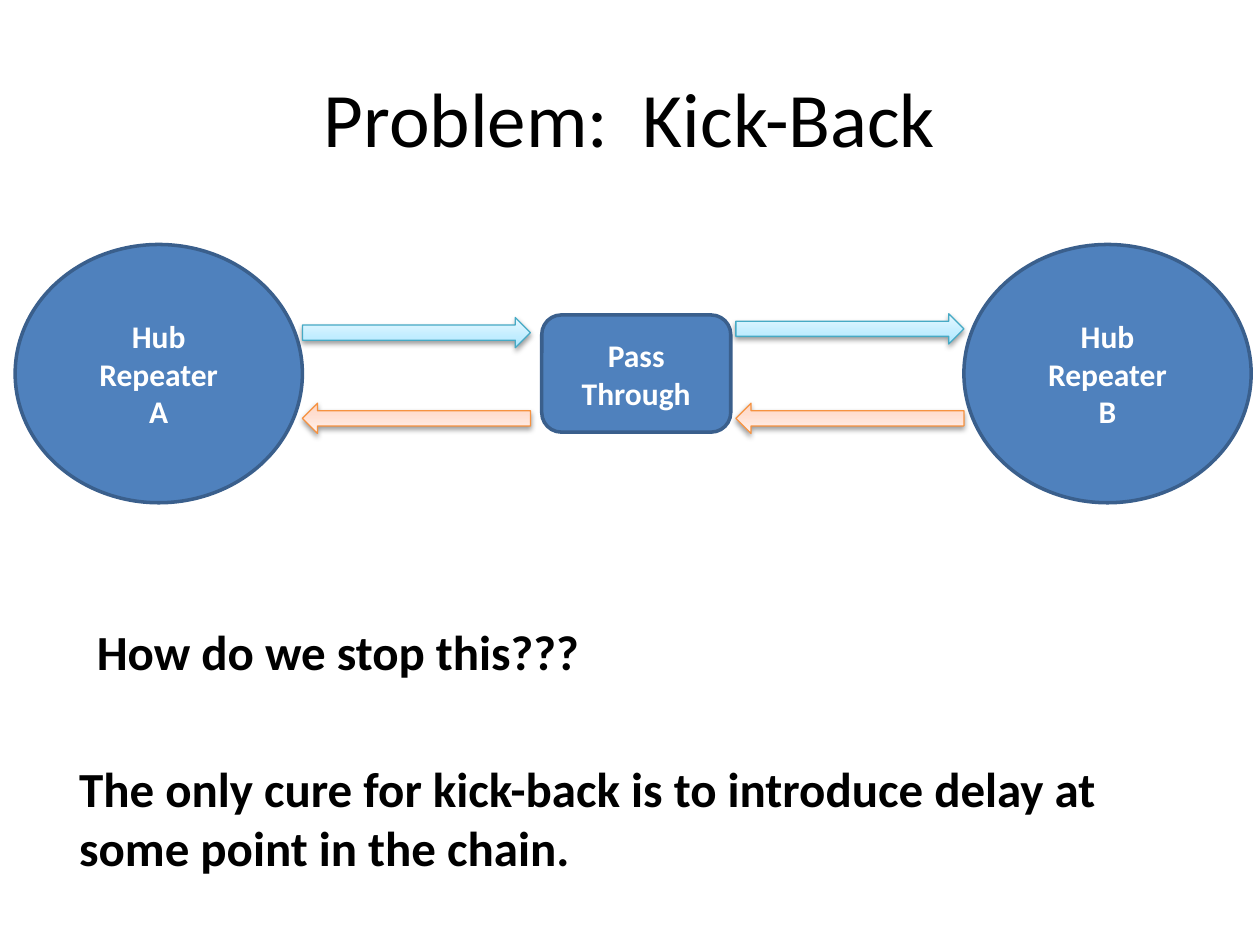
from copy import deepcopy
from dataclasses import dataclass

from lxml.etree import SubElement
from pptx import Presentation
from pptx.dml.color import RGBColor
from pptx.enum.shapes import MSO_SHAPE
from pptx.enum.text import MSO_ANCHOR, PP_ALIGN
from pptx.oxml.ns import qn
from pptx.util import Inches, Pt


@dataclass(frozen=True)
class Theme:
    font: str = "Calibri"
    ink: str = "000000"
    white: str = "FFFFFF"
    node: str = "4F81BD"
    edge: str = "3A5F8C"
    send: tuple = ("46AAC5", "A7E6FF", "C1EDFF", "E7F8FF")
    back: tuple = ("F69240", "FFD2BD", "FFDED0", "FFF2ED")
    head: int = 44
    note: int = 28
    label: int = 18


THEME = Theme()


def write(frame, text, size=THEME.note, color=THEME.ink, bold=True,
          align=PP_ALIGN.LEFT, anchor=MSO_ANCHOR.TOP):
    frame.word_wrap = True
    frame.vertical_anchor = anchor
    para = frame.paragraphs[0]
    para.text = text
    para.alignment = align
    for run in para.runs:
        font = run.font
        font.name, font.size, font.bold = THEME.font, Pt(size), bold
        font.color.rgb = RGBColor.from_string(color)


def place(slide, kind, box, line, width):
    shape = slide.shapes.add_shape(kind, *map(Inches, box))
    shape.shadow.inherit = False
    shape.line.color.rgb = RGBColor.from_string(line)
    shape.line.width = Pt(width)
    return shape


def add_node(slide, kind, box, text):
    node = place(slide, kind, box, THEME.edge, 2)
    node.fill.solid()
    node.fill.fore_color.rgb = RGBColor.from_string(THEME.node)
    write(node.text_frame, text, size=THEME.label, color=THEME.white,
          align=PP_ALIGN.CENTER, anchor=MSO_ANCHOR.MIDDLE)


def add_arrow(slide, box, tones, turn=0):
    line, *shades = tones
    arrow = place(slide, MSO_SHAPE.RIGHT_ARROW, box, line, 0.75)
    arrow.rotation = turn
    fill = arrow.fill
    fill.gradient()
    fill.gradient_angle = 90
    props = arrow._element.spPr
    stops = props.find(".//" + qn("a:gsLst"))
    stops.insert(1, deepcopy(stops[0]))
    for stop, spot, shade in zip(fill.gradient_stops, (0, 0.35, 1), shades):
        stop.position = spot
        stop.color.rgb = RGBColor.from_string(shade)
    cast = SubElement(props.find(qn("a:effectLst")), qn("a:outerShdw"),
                      blurRad=str(Pt(3.1)), dist=str(Pt(1.6)),
                      dir="5400000", rotWithShape="0")
    tint = SubElement(cast, qn("a:srgbClr"), val="000000")
    SubElement(tint, qn("a:alpha"), val="38000")


def add_title(slide, box, text):
    title = slide.shapes.title
    title.left, title.top, title.width, title.height = map(Inches, box)
    write(title.text_frame, text, size=THEME.head, bold=False,
          align=PP_ALIGN.CENTER, anchor=MSO_ANCHOR.MIDDLE)


def add_chain(slide, box):
    left, top, width, height = box
    hub, reach, thick = 2.28, 1.81, 0.24
    far = left + width - hub
    for x, name in ((left, "A"), (far, "B")):
        add_node(slide, MSO_SHAPE.OVAL, (x, top, hub, height),
                 f"Hub\nRepeater\n{name}")
    add_node(slide, MSO_SHAPE.ROUNDED_RECTANGLE,
             (left + 4.18, top + 0.56, 1.5, 0.93), "Pass\nThrough")
    starts = (left + hub, far - reach)
    for x, drop in zip(starts, (0.58, 0.55)):
        add_arrow(slide, (x, top + drop, reach, thick), THEME.send)
    for x in starts:
        add_arrow(slide, (x, top + 1.26, reach, thick), THEME.back, turn=180)


def add_note(slide, box, text):
    note = slide.shapes.add_textbox(*map(Inches, box))
    write(note.text_frame, text)


def main():
    deck = Presentation()
    deck.slide_width, deck.slide_height = Inches(10), Inches(7.5)
    slide = deck.slides.add_slide(deck.slide_layouts[5])
    add_title(slide, (0.5, 0.3, 9, 1.25), "Problem:  Kick-Back")
    add_chain(slide, (0.12, 1.94, 9.81, 2.05))
    add_note(slide, (0.53, 5.97, 8.74, 1.04),
             "The only cure for kick-back is to introduce delay at "
             "some point in the chain.")
    add_note(slide, (0.67, 4.88, 8.74, 0.57), "How do we stop this???")
    deck.save("out.pptx")


if __name__ == "__main__":
    main()
